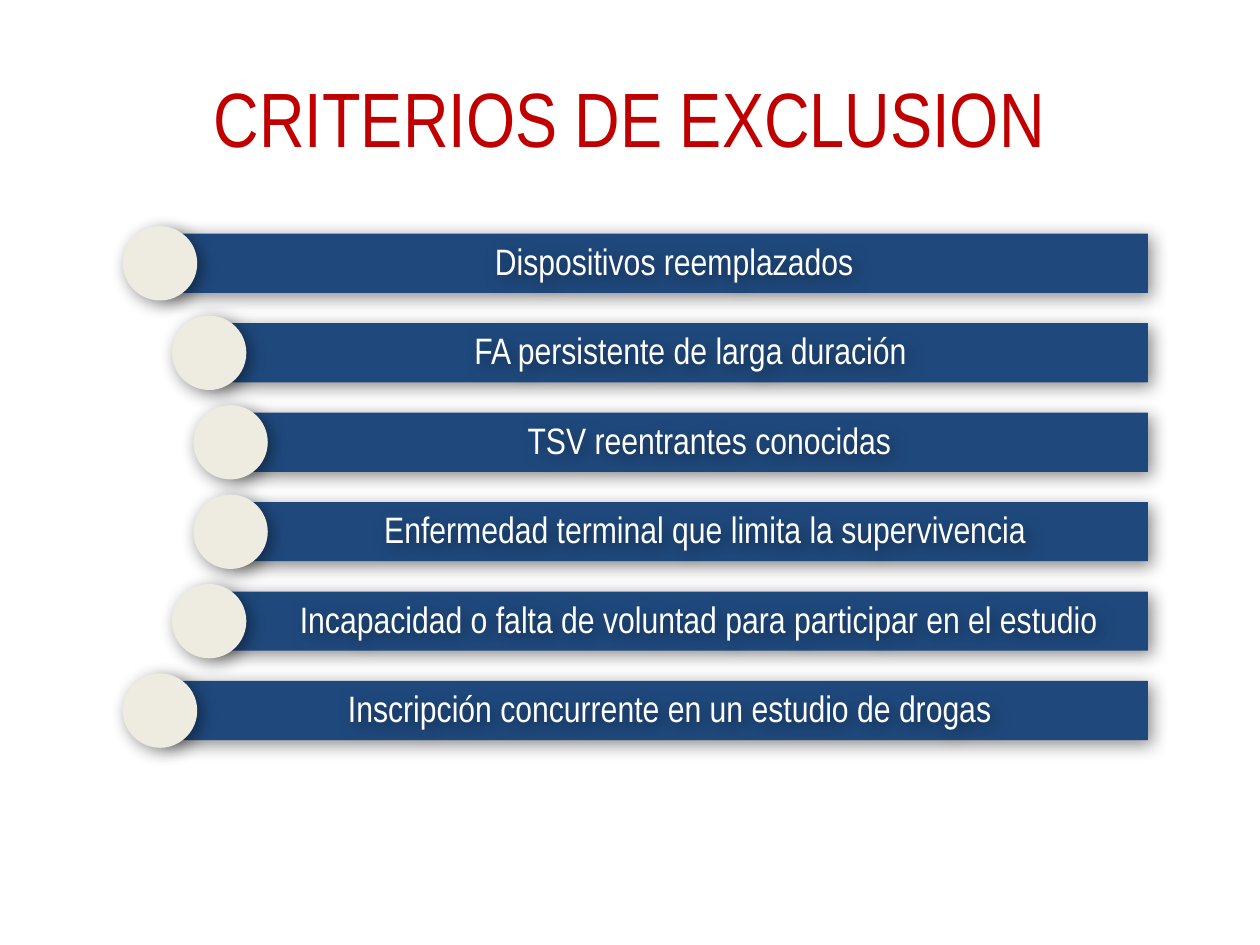
from dataclasses import dataclass

from lxml.etree import SubElement
from pptx import Presentation
from pptx.dml.color import RGBColor
from pptx.enum.shapes import MSO_SHAPE
from pptx.enum.text import MSO_ANCHOR, PP_ALIGN
from pptx.oxml.ns import qn
from pptx.shapes.autoshape import Shape
from pptx.slide import Slide
from pptx.util import Inches, Pt


@dataclass(frozen=True)
class Theme:
    font: str = "Arial Narrow"
    title_size: int = 44
    bar_size: int = 21
    title_color: str = "C00000"
    bar_color: str = "1F497D"
    circle_color: str = "EEECE1"
    text_color: str = "FFFFFF"
    shadow_color: str = "000000"


@dataclass(frozen=True)
class Criterion:
    text: str
    bar_left: float
    right_gap: float = 0.06


THEME = Theme()

# Bars follow a curve: outer, middle and inner left edges
OUTER, MIDDLE, INNER = 1.27, 1.66, 1.83
CRITERIA = [
    Criterion("Dispositivos reemplazados", OUTER),
    Criterion("FA persistente de larga duración", MIDDLE, 0.19),
    Criterion("TSV reentrantes conocidas", INNER),
    Criterion("Enfermedad terminal que limita la supervivencia", INNER, 0.13),
    Criterion("Incapacidad o falta de voluntad para participar en el estudio", MIDDLE),
    Criterion("Inscripción concurrente en un estudio de drogas", OUTER, 0.13),
]
FIRST_CENTER = 2.09
ROW_PITCH = 0.71
BAR_RIGHT = 9.11
BAR_HEIGHT = 0.47
CIRCLE_SIZE = 0.59


def add_shadow(shape: Shape) -> None:
    """Give the shape a soft shadow towards the lower right."""
    shape.shadow.inherit = False
    effects = shape._element.spPr.find(qn("a:effectLst"))
    shadow = SubElement(
        effects, qn("a:outerShdw"),
        blurRad=str(Pt(10)), dist=str(Pt(3)), dir="2700000", rotWithShape="0",
    )
    color = SubElement(shadow, qn("a:srgbClr"), val=THEME.shadow_color)
    SubElement(color, qn("a:alpha"), val="45000")


def add_block(slide: Slide, kind: MSO_SHAPE, left: float, top: float,
              width: float, height: float, color: str) -> Shape:
    """Add a filled shape without an outline."""
    shape = slide.shapes.add_shape(
        kind, Inches(left), Inches(top), Inches(width), Inches(height))
    shape.fill.solid()
    shape.fill.fore_color.rgb = RGBColor.from_string(color)
    shape.line.fill.background()
    add_shadow(shape)
    return shape


def add_text(slide: Slide, text: str, left: float, top: float, width: float,
             height: float, size: int, color: str) -> Shape:
    """Add one centred line of text."""
    box = slide.shapes.add_textbox(
        Inches(left), Inches(top), Inches(width), Inches(height))
    frame = box.text_frame
    frame.word_wrap = True
    frame.vertical_anchor = MSO_ANCHOR.MIDDLE
    frame.text = text
    paragraph = frame.paragraphs[0]
    paragraph.alignment = PP_ALIGN.CENTER
    font = paragraph.runs[0].font
    font.name = THEME.font
    font.size = Pt(size)
    font.color.rgb = RGBColor.from_string(color)
    return box


def add_criterion(slide: Slide, criterion: Criterion, center: float) -> None:
    """Draw a bar, its shadowed label and the circle on its left end."""
    left, top = criterion.bar_left, center - BAR_HEIGHT / 2
    width = BAR_RIGHT - left
    add_block(slide, MSO_SHAPE.RECTANGLE, left, top, width, BAR_HEIGHT,
              THEME.bar_color)

    label = add_text(slide, criterion.text, left, top, width, BAR_HEIGHT,
                     THEME.bar_size, THEME.text_color)
    frame = label.text_frame
    frame.margin_left = Inches(0.38)
    frame.margin_right = Inches(criterion.right_gap)
    frame.margin_top = frame.margin_bottom = Inches(0.06)
    frame.paragraphs[0].line_spacing = 0.9
    add_shadow(label)

    add_block(slide, MSO_SHAPE.OVAL, left - CIRCLE_SIZE / 2,
              center - CIRCLE_SIZE / 2, CIRCLE_SIZE, CIRCLE_SIZE,
              THEME.circle_color)


def main() -> None:
    presentation = Presentation()
    presentation.slide_width = Inches(10)
    presentation.slide_height = Inches(7.5)
    slide = presentation.slides.add_slide(presentation.slide_layouts[6])

    # Title
    add_text(slide, "CRITERIOS DE EXCLUSION", 0.5, 0.3, 9, 1.25,
             THEME.title_size, THEME.title_color)

    # Exclusion criteria
    for row, criterion in enumerate(CRITERIA):
        add_criterion(slide, criterion, FIRST_CENTER + row * ROW_PITCH)

    presentation.save("out.pptx")


if __name__ == "__main__":
    main()
